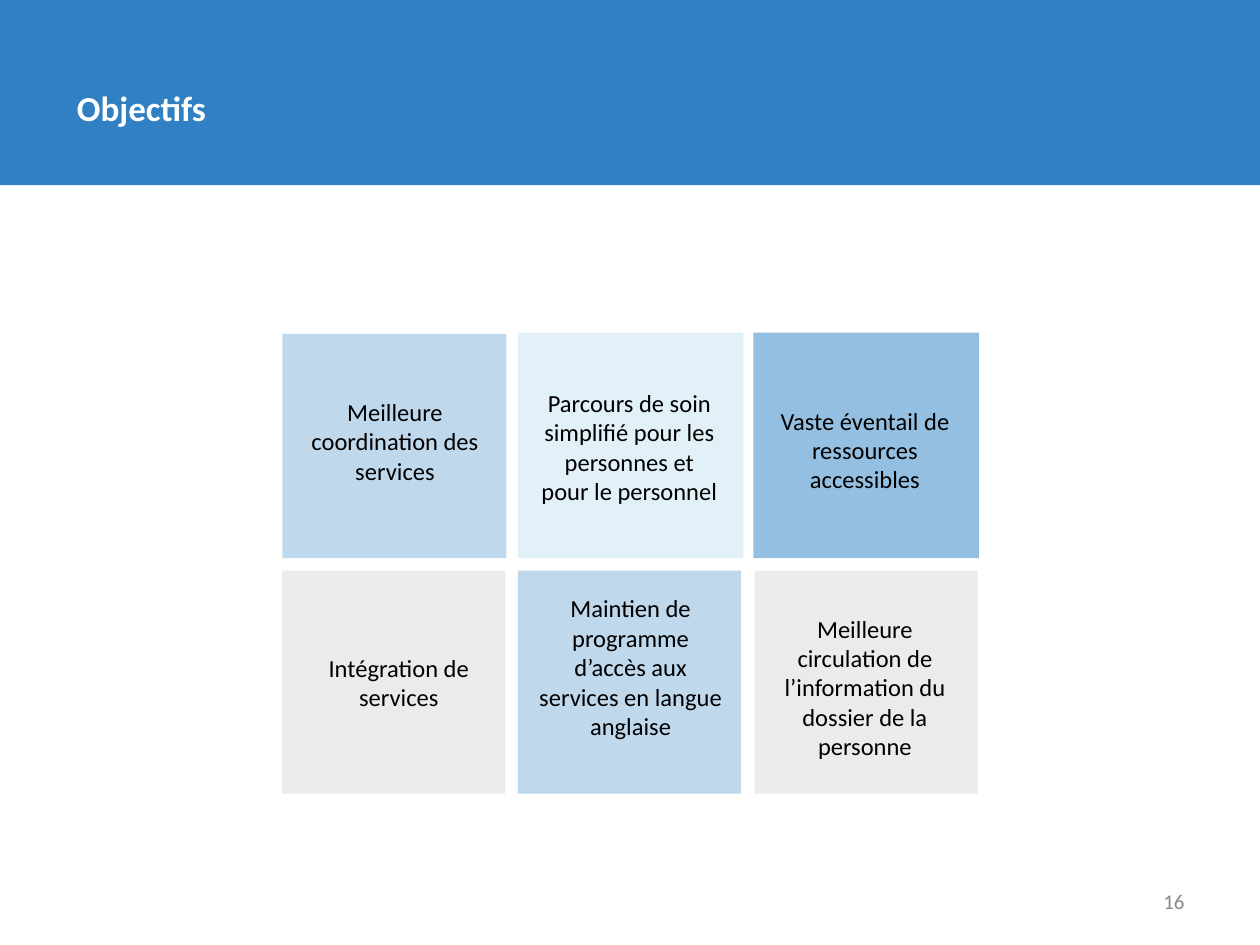
import pptx
import pptx.dml.color
import pptx.enum.shapes
import pptx.enum.text
import pptx.oxml.ns
import pptx.util
from dataclasses import dataclass
from lxml import etree
from pptx.util import Inches


@dataclass(frozen=True)
class Theme:
    font: str = "Calibri"
    banner: str = "3080C3"
    sky: str = "80B3DB"
    ice: str = "C6E3F3"
    blue: str = "2B80C3"
    grey: str = "D9D9D9"
    white: str = "FFFFFF"
    black: str = "000000"
    muted: str = "898989"
    title_size: int = 20
    body_size: int = 14
    number_size: int = 12
    tile_opacity: int = 50


theme = Theme()
align = pptx.enum.text.PP_ALIGN
middle = pptx.enum.text.MSO_ANCHOR.MIDDLE


def add_rectangle(page, left, top, width, height, color, opacity=100):
    box = page.shapes.add_shape(
        pptx.enum.shapes.MSO_SHAPE.RECTANGLE,
        Inches(left), Inches(top), Inches(width), Inches(height))
    box.shadow.inherit = False
    box.line.fill.background()
    box.fill.solid()
    box.fill.fore_color.rgb = pptx.dml.color.RGBColor.from_string(color)
    if opacity < 100:
        tint = box.element.spPr.find(".//" + pptx.oxml.ns.qn("a:srgbClr"))
        etree.SubElement(tint, pptx.oxml.ns.qn("a:alpha"), val=str(opacity * 1000))
    return box


def write_text(box, text, size, color, alignment, bold=False):
    box.text_frame.word_wrap = True
    para = box.text_frame.paragraphs[0]
    para.alignment = alignment
    span = para.add_run()
    span.text = text
    span.font.name = theme.font
    span.font.size = pptx.util.Pt(size)
    span.font.bold = bold
    span.font.color.rgb = pptx.dml.color.RGBColor.from_string(color)
    return para


deck = pptx.Presentation()
deck.slide_width, deck.slide_height = Inches(10), Inches(7.5)
page = deck.slides.add_slide(deck.slide_layouts.get_by_name("Title Only"))

# Title on its banner
title = page.shapes.title
title.left, title.top = Inches(0.51), Inches(0.36)
title.width, title.height = Inches(8.27), Inches(0.71)
title.text_frame.vertical_anchor = middle
para = write_text(title, "Objectifs", theme.title_size, theme.white, align.LEFT, bold=True)
para.line_spacing = pptx.util.Pt(44)
banner = add_rectangle(page, 0, 0, 10, 1.47, theme.banner)
title.element.addprevious(banner.element)

# Tiles: left, top, side, colour
tiles = [
    (2.24, 2.65, 1.78, theme.sky),
    (4.11, 2.64, 1.79, theme.ice),
    (5.98, 2.64, 1.79, theme.blue),
    (2.24, 4.53, 1.77, theme.grey),
    (4.11, 4.53, 1.77, theme.sky),
    (5.99, 4.53, 1.77, theme.grey),
]
for left, top, side, color in tiles:
    add_rectangle(page, left, top, side, side, color, theme.tile_opacity)

# Objectives: left, top, width, height, wording
objectives = [
    (2.33, 3.1, 1.61, 0.81, "Meilleure coordination des services"),
    (4.19, 3.03, 1.61, 1.04,
     "Parcours de soin simplifié pour les personnes et pour le personnel"),
    (6.06, 3.17, 1.61, 0.81, "Vaste éventail de ressources accessibles"),
    (2.36, 5.13, 1.61, 0.57, "Intégration de services"),
    (4.15, 4.66, 1.71, 1.28,
     "Maintien de programme d’accès aux services en langue anglaise"),
    (6.06, 4.82, 1.61, 1.28,
     "Meilleure circulation de l’information du dossier de la personne"),
]
for left, top, width, height, wording in objectives:
    box = page.shapes.add_textbox(Inches(left), Inches(top), Inches(width), Inches(height))
    box.text_frame.auto_size = pptx.enum.text.MSO_AUTO_SIZE.SHAPE_TO_FIT_TEXT
    write_text(box, wording, theme.body_size, theme.black, align.CENTER)

# Page number
number = page.shapes.add_textbox(Inches(7.17), Inches(6.95), Inches(2.33), Inches(0.4))
number.text_frame.vertical_anchor = middle
write_text(number, "16", theme.number_size, theme.muted, align.RIGHT)

deck.save("out.pptx")
